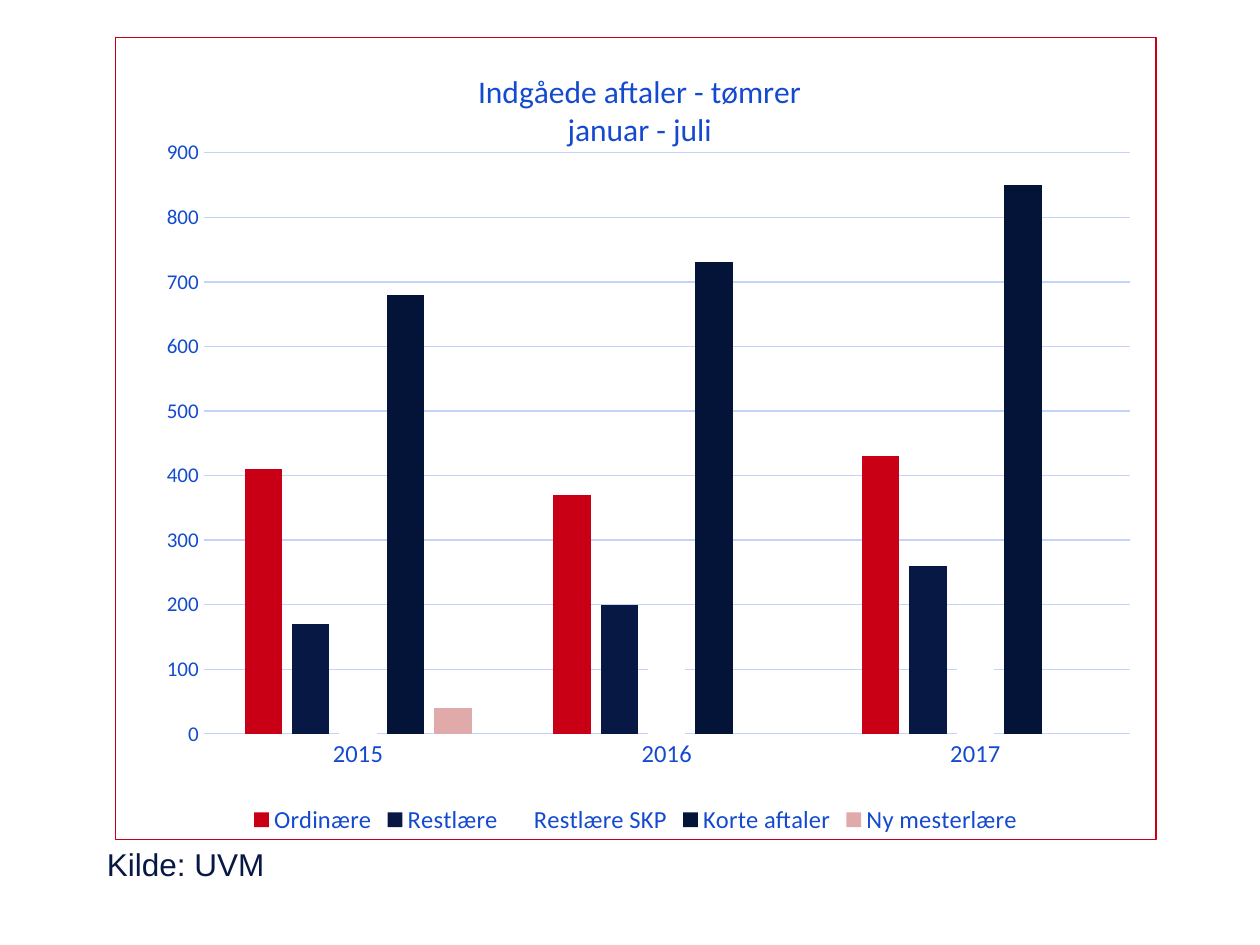
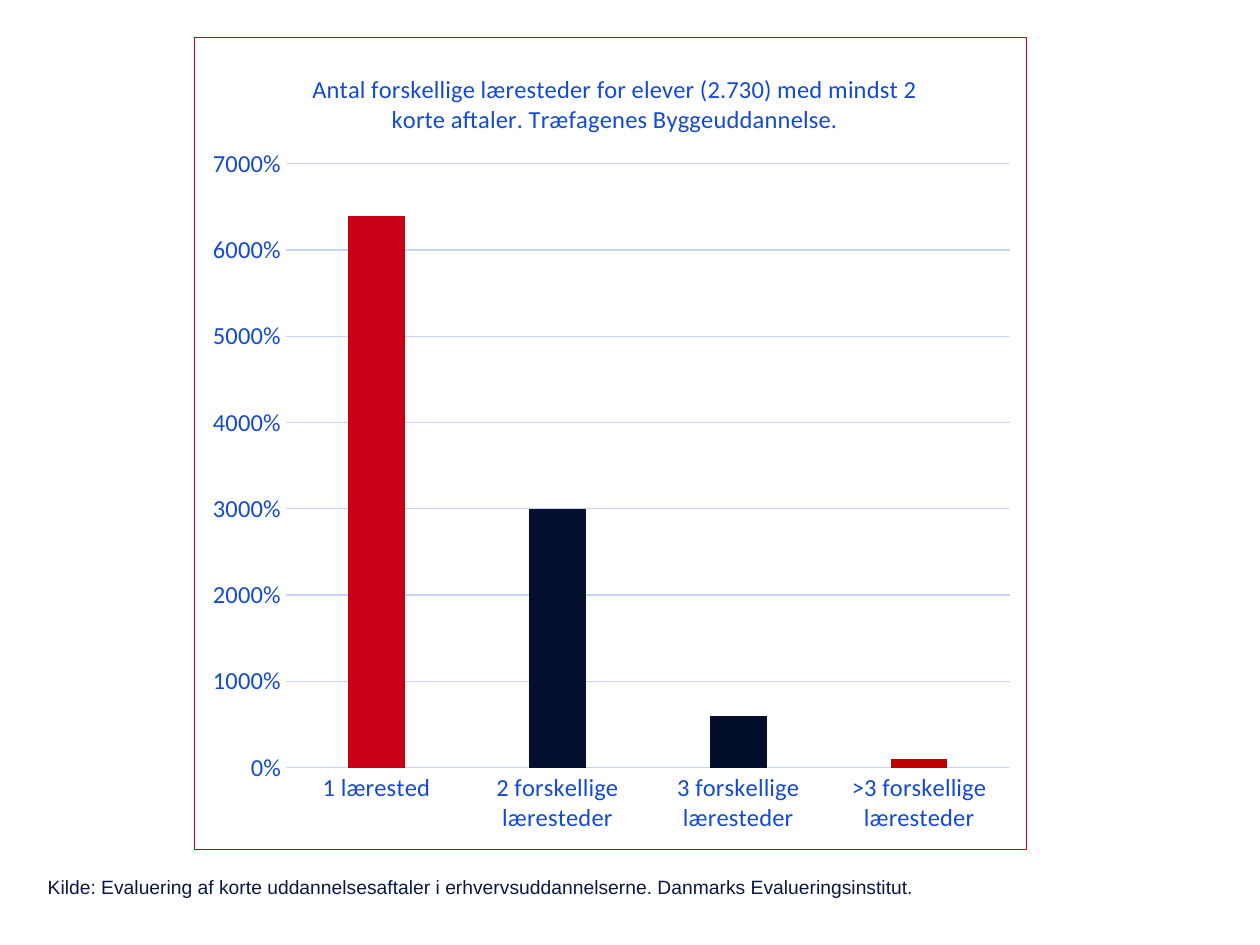
import pptx
import pptx.chart.data
import pptx.dml.color
import pptx.enum.chart
import pptx.oxml
import pptx.oxml.ns
import pptx.util

Pt = pptx.util.Pt
qn = pptx.oxml.ns.qn
enum = pptx.enum.chart

RED, NAVY, BLUE, PALE = "C90015", "061843", "134ACF", "C3D3FA"
SPACE = ('xmlns:c="http://schemas.openxmlformats.org/drawingml/2006/chart" '
         'xmlns:a="http://schemas.openxmlformats.org/drawingml/2006/main"')


def color(code):
    return pptx.dml.color.RGBColor.from_string(code)


def style(font, size, code, face="Calibri"):
    font.size = Pt(size)
    font.name = face
    font.bold = False
    font.color.rgb = color(code)


def paint(fill, code):
    fill.solid()
    fill.fore_color.rgb = color(code)


def rule(line, code):
    line.color.rgb = color(code)
    line.width = Pt(0.75)


def place(parent, index, inner="", **spots):
    old = parent.find(qn("c:layout"))
    if old is not None:
        parent.remove(old)
    modes = "".join(f'<c:{key}Mode val="edge"/>' for key in "xy")
    sizes = "".join(f'<c:{key} val="{val}"/>' for key, val in spots.items())
    parent.insert(index, pptx.oxml.parse_xml(
        f"<c:layout {SPACE}><c:manualLayout>{inner}{modes}{sizes}"
        "</c:manualLayout></c:layout>"))


def frame(chart):
    border = pptx.oxml.parse_xml(
        f'<c:spPr {SPACE}><a:noFill/><a:ln w="{Pt(0.75)}"><a:solidFill>'
        f'<a:srgbClr val="{RED}"/></a:solidFill></a:ln></c:spPr>')
    chart.element.find(qn("c:chart")).addnext(border)


def head(chart, lines, size, left):
    title = chart.chart_title
    text = title.text_frame
    text.text = "\n".join(lines)
    for para in text.paragraphs:
        style(para.font, size, BLUE)
    title.include_in_layout = False
    place(title.format.fill and chart.element.find(qn("c:chart")).find(qn("c:title")),
          1, x=left, y=0.037)


def axes(chart, size, top, step, form):
    cats, vals = chart.category_axis, chart.value_axis
    for axis, points in ((cats, 14), (vals, size)):
        axis.major_tick_mark = axis.minor_tick_mark = enum.XL_TICK_MARK.NONE
        style(axis.tick_labels.font, points, BLUE)
    rule(cats.format.line, PALE)
    cats.has_major_gridlines = False
    vals.format.line.fill.background()
    vals.has_major_gridlines = True
    rule(vals.major_gridlines.format.line, PALE)
    vals.minimum_scale, vals.maximum_scale, vals.major_unit = 0, top, step
    vals.tick_labels.number_format = form
    vals.tick_labels.number_format_is_linked = False


def bars(slide, box, names, rows, title, scale, area):
    data = pptx.chart.data.CategoryChartData()
    data.categories = names
    for name, nums, _ in rows:
        data.add_series(name, nums)
    chart = slide.shapes.add_chart(
        enum.XL_CHART_TYPE.COLUMN_CLUSTERED, *map(Pt, box), data).chart
    style(chart.font, 10, NAVY)
    head(chart, *title)
    axes(chart, *scale)
    plot = chart.plots[0]
    plot.gap_width, plot.overlap = 219, -27
    plot.vary_by_categories = False
    for part, (_, _, code) in zip(plot.series, rows):
        part.invert_if_negative = False
        paint(part.format.fill, code)
    chart.has_legend = False
    place(chart.element.find(qn("c:chart")).find(qn("c:plotArea")), 0,
          '<c:layoutTarget val="inner"/>', **dict(zip("xywh", area)))
    frame(chart)
    return chart


def source(slide, box, words, size):
    text = slide.shapes.add_textbox(*map(Pt, box)).text_frame
    text.word_wrap = True
    text.text = words
    style(text.paragraphs[0].font, size, NAVY, "Arial")


def deals(slide):
    rows = [("Ordinære", (410, 370, 430), RED),
            ("Restlære", (170, 200, 260), NAVY),
            ("Restlære SKP", (60, 120, 140), "FFFFFF"),
            ("Korte aftaler", (680, 730, 850), "041338"),
            ("Ny mesterlære", (40, None, None), "E1AAAA")]
    chart = bars(slide, (65.5, 20.9, 595.4, 459.4), ("2015", "2016", "2017"), rows,
                 (("Indgåede aftaler - tømrer", "januar - juli"), 18, 0.345),
                 (12, 900, 100, "General"), (0.085, 0.144, 0.89, 0.724))
    chart.has_legend = True
    chart.legend.position = enum.XL_LEGEND_POSITION.BOTTOM
    chart.legend.include_in_layout = False
    style(chart.legend.font, 14, BLUE)
    source(slide, (54, 479.5, 385.2, 29), "Kilde: UVM", 18)


def sites(slide):
    names = ["1 lærested"] + [f"{num} forskellige læresteder" for num in ("2", "3", ">3")]
    title = ("Antal forskellige læresteder for elever (2.730) med mindst 2 "
             "korte aftaler. Træfagenes Byggeuddannelse.")
    chart = bars(slide, (110.9, 20.9, 475.9, 465.1), names,
                 [("Series 1", (64, 30, 6, 1), RED)], ((title,), 14, 0.136),
                 (14, 70, 10, "0%"), (0.11, 0.156, 0.87, 0.743))
    points = chart.plots[0].series[0].points
    for index, code in enumerate(("04102D", "030E2A", "C00000"), 1):
        paint(points[index].format.fill, code)
    source(slide, (20.2, 496.8, 679, 20.9),
           "Kilde: Evaluering af korte uddannelsesaftaler i "
           "erhvervsuddannelserne. Danmarks Evalueringsinstitut.", 11)


def main():
    deck = pptx.Presentation()
    deck.slide_width, deck.slide_height = Pt(720), Pt(540)
    for build in (deals, sites):
        build(deck.slides.add_slide(deck.slide_layouts[6]))
    deck.save("out.pptx")


if __name__ == "__main__":
    main()
